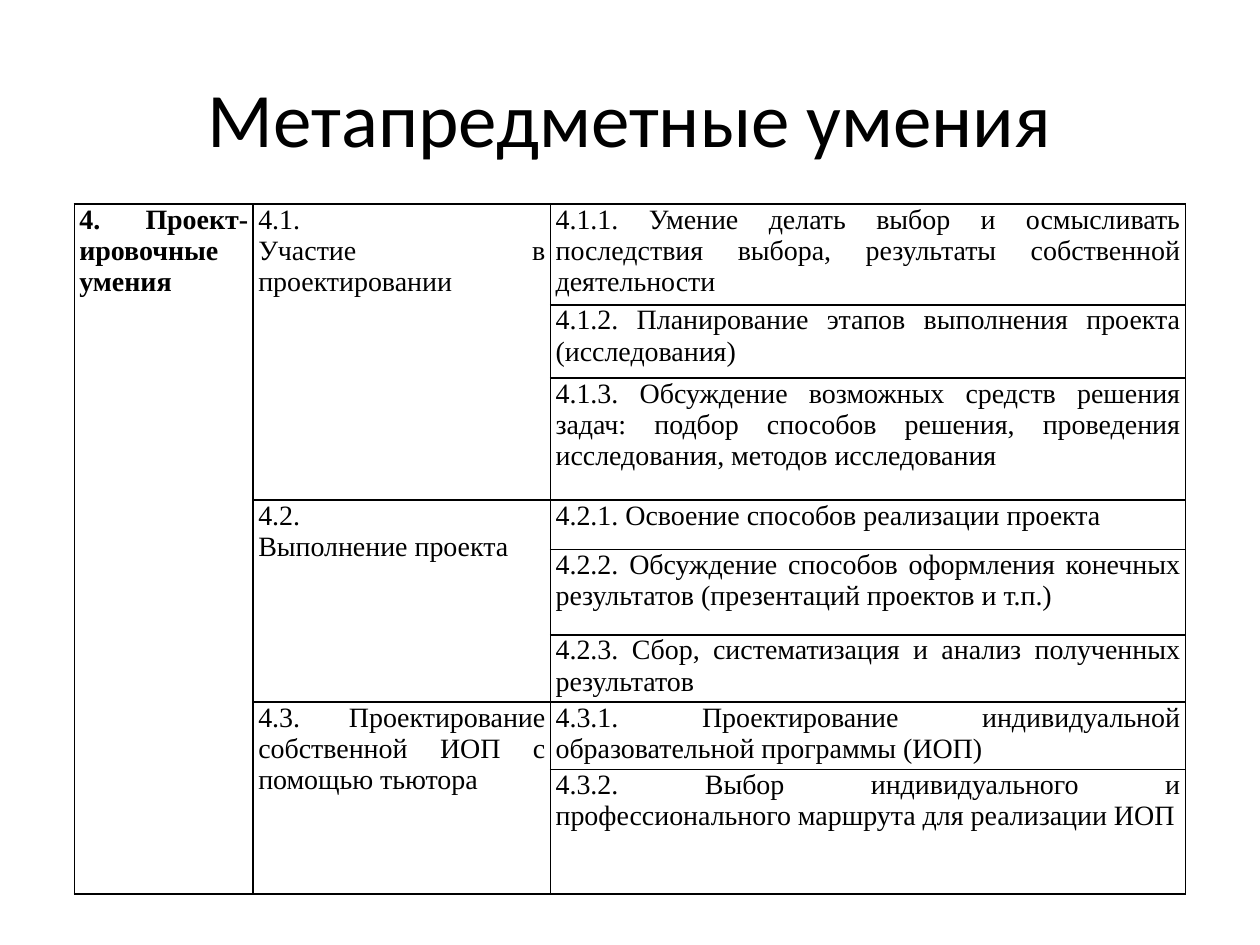
from lxml.etree import SubElement
from pptx import Presentation
from pptx.dml.color import RGBColor
from pptx.enum.text import MSO_ANCHOR, PP_ALIGN
from pptx.oxml.ns import qn
from pptx.util import Inches, Pt

TITLE = "Метапредметные умения"
SKILL_AREA = "4. Проект-ировочные умения"
# Each group: paragraphs of the middle column, then its skills
GROUPS = [
    (["4.1. ", "Участие в проектировании "], [
        "4.1.1. Умение делать выбор и осмысливать последствия выбора, "
        "результаты собственной деятельности",
        "4.1.2. Планирование этапов выполнения проекта (исследования)",
        "4.1.3. Обсуждение возможных средств решения задач: подбор способов "
        "решения, проведения исследования, методов исследования",
    ]),
    (["4.2.", "Выполнение проекта "], [
        "4.2.1. Освоение способов реализации проекта",
        "4.2.2. Обсуждение способов оформления конечных результатов "
        "(презентаций проектов и т.п.)",
        "4.2.3. Сбор, систематизация и анализ полученных результатов",
    ]),
    (["4.3. Проектирование собственной ИОП с помощью тьютора"], [
        "4.3.1. Проектирование индивидуальной образовательной программы (ИОП)",
        "4.3.2. Выбор индивидуального и профессионального маршрута "
        "для реализации ИОП",
    ]),
]
COLUMN_WIDTHS = [1.42, 2.36, 5.04]
ROW_HEIGHTS = [0.78, 0.58, 0.97, 0.39, 0.68, 0.49, 0.49, 0.99]
COLORS = {"text": "000000", "border": "000000"}
TITLE_FONT = {"name": "Calibri", "size": Pt(44), "bold": False}
CELL_FONT = {"name": "Times New Roman", "size": Pt(16), "bold": False}
CELL_FORMAT = {
    "margin_left": Inches(0.04), "margin_right": Inches(0.04),
    "margin_top": 0, "margin_bottom": 0, "vertical_anchor": MSO_ANCHOR.TOP,
}


def set_attributes(target, values):
    for name, value in values.items():
        setattr(target, name, value)


def write(frame, paragraphs, font, alignment):
    frame.text = "\n".join(paragraphs)
    for paragraph in frame.paragraphs:
        paragraph.alignment = alignment
        for run in paragraph.runs:
            set_attributes(run.font, font)
            run.font.color.rgb = RGBColor.from_string(COLORS["text"])


def format_cell(cell):
    set_attributes(cell, CELL_FORMAT)
    properties = cell._tc.get_or_add_tcPr()
    for side in ("lnL", "lnR", "lnT", "lnB"):
        line = SubElement(properties, qn(f"a:{side}"), w=str(Pt(1)))
        fill = SubElement(line, qn("a:solidFill"))
        SubElement(fill, qn("a:srgbClr"), val=COLORS["border"])
    cell.fill.background()


def fill_cell(table, row, column, paragraphs, span=1, **font):
    cell = table.cell(row, column)
    if span > 1:
        cell.merge(table.cell(row + span - 1, column))
    write(cell.text_frame, paragraphs, {**CELL_FONT, **font}, PP_ALIGN.JUSTIFY)


def main():
    presentation = Presentation()
    presentation.slide_width, presentation.slide_height = Inches(10), Inches(7.5)
    slide = presentation.slides.add_slide(presentation.slide_layouts[6])

    # Title
    title = slide.shapes.add_textbox(Inches(0.5), Inches(0.3), Inches(9), Inches(1.25))
    set_attributes(title.text_frame,
                   {"word_wrap": True, "vertical_anchor": MSO_ANCHOR.MIDDLE})
    write(title.text_frame, [TITLE], TITLE_FONT, PP_ALIGN.CENTER)

    # Table grid
    table = slide.shapes.add_table(
        len(ROW_HEIGHTS), len(COLUMN_WIDTHS), Inches(0.59), Inches(1.62),
        Inches(sum(COLUMN_WIDTHS)), Inches(sum(ROW_HEIGHTS))).table
    set_attributes(table, {"first_row": False, "horz_banding": False})
    for column, width in zip(table.columns, COLUMN_WIDTHS):
        column.width = Inches(width)
    for row, height in zip(table.rows, ROW_HEIGHTS):
        row.height = Inches(height)
    for cell in table.iter_cells():
        format_cell(cell)

    # Skill area, groups and skills
    fill_cell(table, 0, 0, [SKILL_AREA], len(ROW_HEIGHTS), bold=True)
    row = 0
    for heading, skills in GROUPS:
        fill_cell(table, row, 1, heading, len(skills))
        for skill in skills:
            fill_cell(table, row, 2, [skill])
            row += 1

    presentation.save("out.pptx")


if __name__ == "__main__":
    main()
